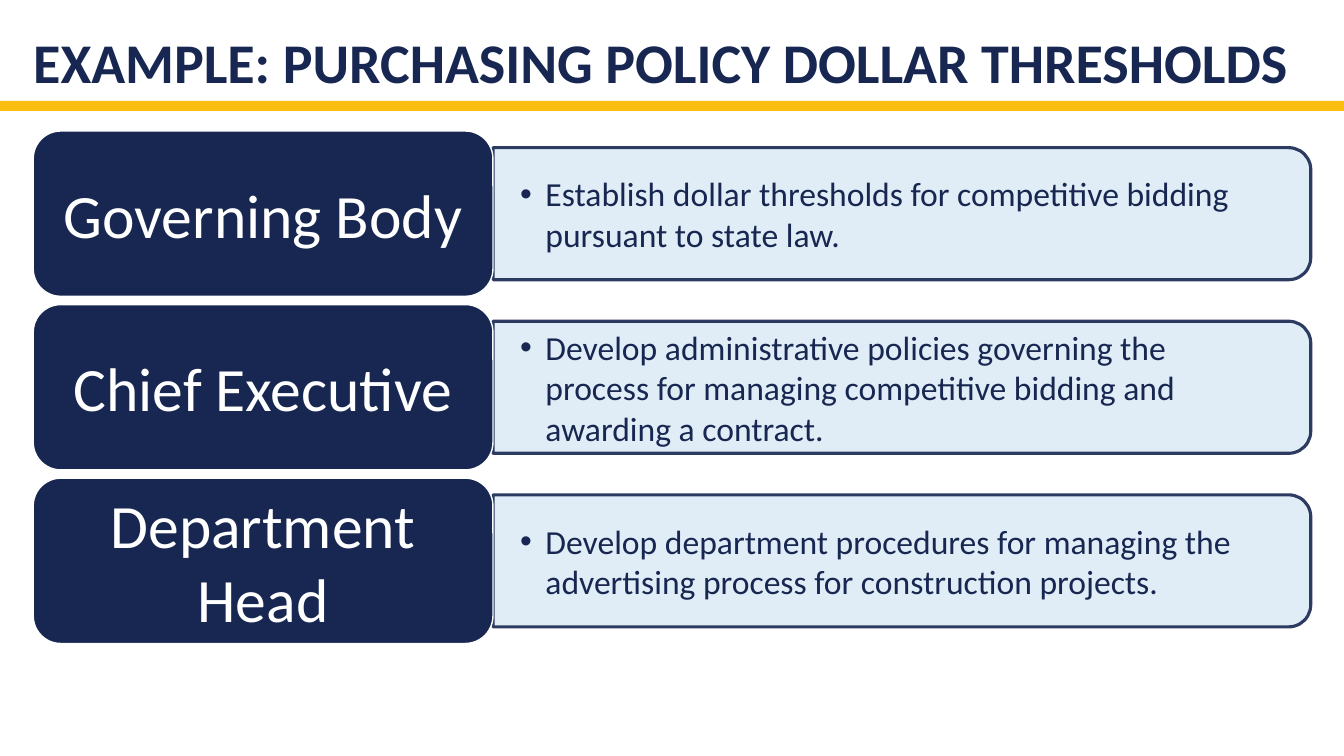
from lxml import etree
from pptx import Presentation
from pptx.dml.color import RGBColor
from pptx.enum.shapes import MSO_SHAPE
from pptx.enum.text import MSO_ANCHOR, PP_ALIGN
from pptx.oxml.ns import qn
from pptx.util import Inches, Pt

TITLE = "EXAMPLE: PURCHASING POLICY DOLLAR THRESHOLDS"
ROLES = [
    ("Governing Body",
     "Establish dollar thresholds for competitive bidding pursuant to state law."),
    ("Chief Executive",
     "Develop administrative policies governing the process for managing "
     "competitive bidding and awarding a contract."),
    ("Department Head",
     "Develop department procedures for managing the advertising process "
     "for construction projects."),
]
THEME = {
    "font": "Calibri",
    "navy": RGBColor(0x18, 0x27, 0x51),
    "gold": RGBColor(0xFE, 0xBD, 0x11),
    "pale": RGBColor(0xDD, 0xEC, 0xF6),
    "white": RGBColor(0xFF, 0xFF, 0xFF),
    "title": Pt(40), "role": Pt(44), "duty": Pt(24),
}
RECTANGLE = MSO_SHAPE.RECTANGLE
ROUNDED = MSO_SHAPE.ROUNDED_RECTANGLE
ROUND_TOP = MSO_SHAPE.ROUND_2_SAME_RECTANGLE
MIDDLE, BOTTOM = MSO_ANCHOR.MIDDLE, MSO_ANCHOR.BOTTOM
LEFT, CENTER = PP_ALIGN.LEFT, PP_ALIGN.CENTER

SLIDE_WIDTH, SLIDE_HEIGHT = 13.33, 7.5
MARGIN, ROWS_TOP = 0.33, 1.3
ROLE_WIDTH, ROLE_HEIGHT, ROLE_INSET = 4.56, 1.64, 0.08
ROW_PITCH = ROLE_HEIGHT * 1.05
DUTY_LEFT = MARGIN + ROLE_WIDTH
DUTY_WIDTH, DUTY_HEIGHT = 8.11, 1.31
DUTY_TEXT_WIDTH, DUTY_TEXT_HEIGHT = 8.04, 1.18
BULLET_INDENT = Inches(0.25)


def add_panel(slide, kind, area, fill, line=None, line_width=0):
    panel = slide.shapes.add_shape(kind, *map(Inches, area))
    panel.shadow.inherit = False
    panel.fill.solid()
    panel.fill.fore_color.rgb = fill
    if line is None:
        panel.line.fill.background()
    else:
        panel.line.color.rgb = line
        panel.line.width = Pt(line_width)
    return panel


def add_text(slide, area, text, size, color, anchor, align, insets):
    box = slide.shapes.add_textbox(*map(Inches, area))
    frame = box.text_frame
    frame.word_wrap = True
    frame.vertical_anchor = anchor
    side, end = map(Inches, insets)
    frame.margin_left = frame.margin_right = side
    frame.margin_top = frame.margin_bottom = end
    frame.text = text
    para = frame.paragraphs[0]
    para.alignment = align
    font = para.runs[0].font
    font.name, font.size = THEME["font"], size
    font.color.rgb = color
    return para


def add_bullet(para):
    properties = para._p.get_or_add_pPr()
    properties.set("marL", str(BULLET_INDENT))
    properties.set("indent", str(-BULLET_INDENT))
    etree.SubElement(properties, qn("a:buFont"), typeface="Arial")
    etree.SubElement(properties, qn("a:buChar"), char="•")


def set_opacity(panel, percent):
    """Apply one opacity to both fill and line."""
    for color in panel._element.spPr.iter(qn("a:srgbClr")):
        etree.SubElement(color, qn("a:alpha"), val=str(percent * 1000))


def add_role_row(slide, top, role, duty):
    middle = top + ROLE_HEIGHT / 2
    # The panel is drawn upright, then turned so its round corners face right.
    duty_area = (DUTY_LEFT + (DUTY_WIDTH - DUTY_HEIGHT) / 2,
                 middle - DUTY_WIDTH / 2, DUTY_HEIGHT, DUTY_WIDTH)
    panel = add_panel(slide, ROUND_TOP, duty_area, THEME["pale"], THEME["navy"], 2.25)
    panel.rotation = 90
    set_opacity(panel, 90)
    text_area = (DUTY_LEFT, middle - DUTY_TEXT_HEIGHT / 2,
                 DUTY_TEXT_WIDTH, DUTY_TEXT_HEIGHT)
    add_bullet(add_text(slide, text_area, duty, THEME["duty"], THEME["navy"],
                        MIDDLE, LEFT, (0.27, 0.14)))

    add_panel(slide, ROUNDED, (MARGIN, top, ROLE_WIDTH, ROLE_HEIGHT),
              THEME["navy"], THEME["white"], 1)
    role_area = (MARGIN + ROLE_INSET, top + ROLE_INSET,
                 ROLE_WIDTH - 2 * ROLE_INSET, ROLE_HEIGHT - 2 * ROLE_INSET)
    add_text(slide, role_area, role, THEME["role"], THEME["white"],
             MIDDLE, CENTER, (0.18, 0.09))


def main():
    deck = Presentation()
    deck.slide_width, deck.slide_height = Inches(SLIDE_WIDTH), Inches(SLIDE_HEIGHT)
    slide = deck.slides.add_slide(deck.slide_layouts[6])
    add_panel(slide, RECTANGLE, (0, 1, SLIDE_WIDTH, 0.1), THEME["gold"])
    title = add_text(slide, (MARGIN, 0, SLIDE_WIDTH - 2 * MARGIN, 1), TITLE,
                     THEME["title"], THEME["navy"], BOTTOM, LEFT, (0, 0.05))
    title.line_spacing = 0.9
    title.runs[0].font.bold = True
    for index, (role, duty) in enumerate(ROLES):
        add_role_row(slide, ROWS_TOP + index * ROW_PITCH, role, duty)
    deck.save("out.pptx")


if __name__ == "__main__":
    main()
